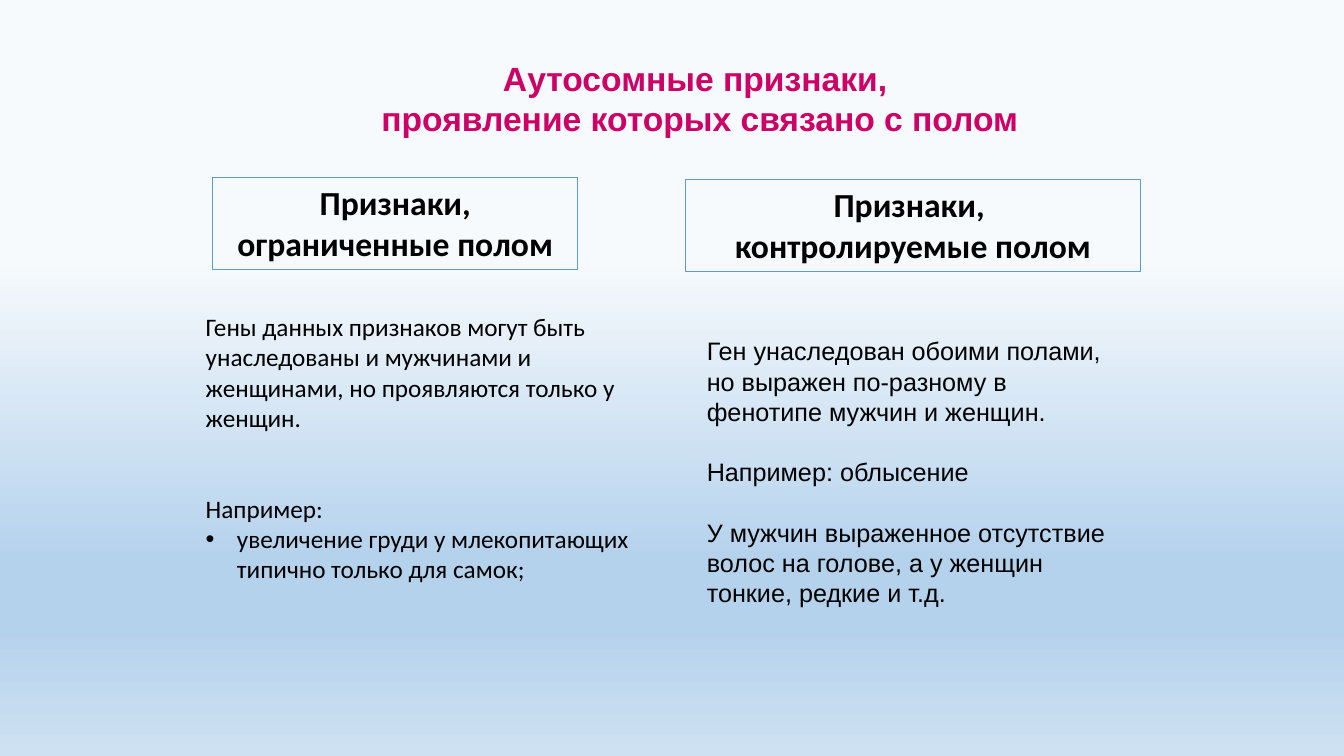
import dataclasses

import pptx
import pptx.dml.color
import pptx.enum.dml
import pptx.enum.shapes
import pptx.enum.text
import pptx.oxml
import pptx.oxml.ns
import pptx.shapes.autoshape
import pptx.slide
import pptx.util
from pptx.util import Inches

RGBColor = pptx.dml.color.RGBColor
PINK = RGBColor(0xCC, 0x00, 0x66)
BLACK = RGBColor(0x00, 0x00, 0x00)
BLUE = RGBColor(0x5B, 0x9B, 0xD5)
PALE = RGBColor(0xF7, 0xFA, 0xFD)
SKY = RGBColor(0xB5, 0xD2, 0xEC)
MIST = RGBColor(0xCE, 0xE1, 0xF2)
STOPS = [(34, PALE), (74, SKY), (83, SKY), (100, MIST)]

LEFT = pptx.enum.text.PP_ALIGN.LEFT
CENTER = pptx.enum.text.PP_ALIGN.CENTER
HEADING = {"size": pptx.util.Pt(24), "bold": True}
BODY = {"size": pptx.util.Pt(18), "bold": False}


@dataclasses.dataclass
class Para:
    text: str
    gap: float = 0
    bullet: bool = False


@dataclasses.dataclass
class Block:
    left: float
    top: float
    width: float
    height: float
    paras: list[Para]
    font: dict
    align: pptx.enum.text.PP_ALIGN = LEFT


TITLE = Block(2.57, 0.52, 8.74, 0.91,
              [Para("Аутосомные признаки, "), Para("проявление которых связано с полом")],
              {**HEADING, "name": "Arial", "color": PINK}, CENTER)

HEADERS = [
    Block(2.11, 1.76, 3.62, 0.91, [Para("Признаки, ограниченные полом")],
          {**HEADING, "name": "Calibri", "color": BLACK}, CENTER),
    Block(6.8, 1.78, 4.51, 0.91, [Para("Признаки, "), Para("контролируемые полом")],
          {**HEADING, "name": "Calibri", "color": BLACK}, CENTER),
]

BODIES = [
    Block(1.94, 3.04, 4.41, 3.13, [
        Para("Гены данных признаков могут быть унаследованы и мужчинами и женщинами, "
             "но проявляются только у женщин."),
        Para("Например:", 43.2),
        Para("увеличение груди у млекопитающих типично только для самок;", bullet=True),
    ], {**BODY, "name": "Calibri", "color": BLACK}),
    Block(6.91, 3.28, 4.37, 2.83, [
        Para("Ген унаследован обоими полами, но выражен по-разному в фенотипе мужчин и женщин."),
        Para("Например: облысение", 21.6),
        Para("У мужчин выраженное отсутствие волос на голове, а у женщин тонкие, редкие и т.д.", 21.6),
    ], {**BODY, "name": "Arial", "color": BLACK}),
]


def paint_background(slide: pptx.slide.Slide) -> None:
    fill = slide.background.fill
    fill.gradient()
    fill.gradient_angle = 270
    stops = slide.background._cSld.find(".//" + pptx.oxml.ns.qn("a:gsLst"))
    for gs in list(stops):
        stops.remove(gs)
    for pos, color in STOPS:
        stops.append(pptx.oxml.parse_xml(
            f'<a:gs {pptx.oxml.ns.nsdecls("a")} pos="{pos * 1000}">'
            f'<a:srgbClr val="{color}"/></a:gs>'))


def set_bullet(p, bullet: bool) -> None:
    indent = Inches(0.31) if bullet else 0
    pPr = p._p.get_or_add_pPr()
    pPr.set("marL", str(indent))
    pPr.set("indent", str(-indent))
    ns = pptx.oxml.ns.nsdecls("a")
    marks = ([f'<a:buFont {ns} typeface="Arial"/>', f'<a:buChar {ns} char="•"/>']
             if bullet else [f"<a:buNone {ns}/>"])
    for mark in marks:
        pPr.append(pptx.oxml.parse_xml(mark))


def write_block(sp: pptx.shapes.autoshape.Shape, block: Block) -> None:
    for side in ("left", "top", "width", "height"):
        setattr(sp, side, Inches(getattr(block, side)))
    tf = sp.text_frame
    frame = {"word_wrap": True, "auto_size": pptx.enum.text.MSO_AUTO_SIZE.NONE,
             "vertical_anchor": pptx.enum.text.MSO_ANCHOR.TOP}
    for key, value in frame.items():
        setattr(tf, key, value)
    for i, para in enumerate(block.paras):
        p = tf.add_paragraph() if i else tf.paragraphs[0]
        spacing = {"alignment": block.align, "line_spacing": 1.0,
                   "space_before": pptx.util.Pt(para.gap), "space_after": pptx.util.Pt(0)}
        for key, value in spacing.items():
            setattr(p, key, value)
        set_bullet(p, para.bullet)
        r = p.add_run()
        r.text = para.text
        for key, value in block.font.items():
            if key == "color":
                r.font.color.rgb = value
            else:
                setattr(r.font, key, value)


def add_header(slide: pptx.slide.Slide, block: Block) -> None:
    sp = slide.shapes.add_shape(pptx.enum.shapes.MSO_SHAPE.RECTANGLE, 0, 0, 0, 0)
    sp.shadow.inherit = False
    sp.fill.background()
    sp.line.color.rgb = BLUE
    sp.line.width = pptx.util.Pt(0.75)
    write_block(sp, block)


def main() -> None:
    prs = pptx.Presentation()
    prs.slide_width, prs.slide_height = Inches(13.33), Inches(7.5)
    slide = prs.slides.add_slide(prs.slide_layouts.get_by_name("Two Content"))
    paint_background(slide)
    write_block(slide.shapes.title, TITLE)
    for header in HEADERS:
        add_header(slide, header)
    for idx, body in enumerate(BODIES, start=1):
        write_block(slide.placeholders[idx], body)
    prs.save("out.pptx")


if __name__ == "__main__":
    main()
